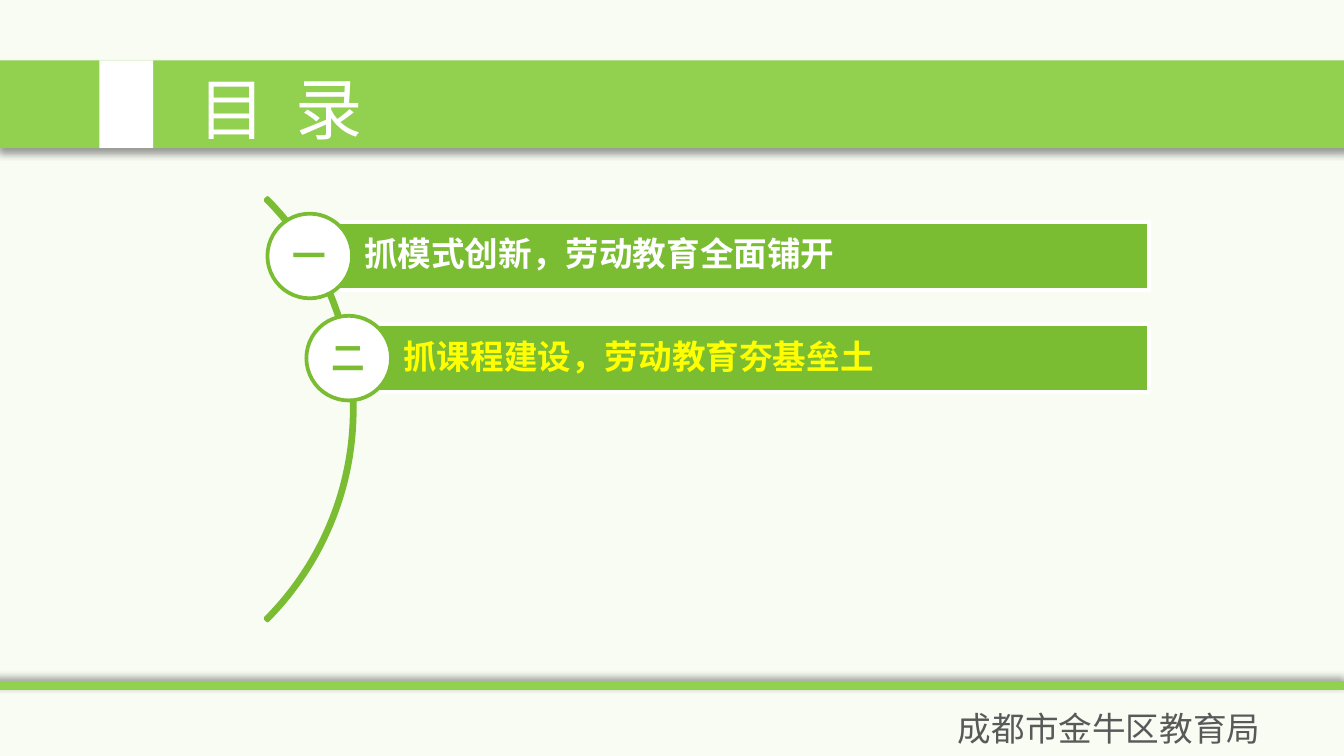
"""Build the contents slide with a title band, an arc and two numbered section bars."""
from lxml import etree
from pptx import Presentation
from pptx import util as u
from pptx.dml.color import RGBColor
from pptx.enum import shapes, text
from pptx.oxml.ns import qn

PX = 4572
GREEN = RGBColor(0x92, 0xD0, 0x50)
DARK_GREEN = RGBColor(0x7A, 0xBC, 0x32)
PALE = RGBColor(0xF8, 0xFC, 0xF3)
WHITE = RGBColor(0xFF, 0xFF, 0xFF)
YELLOW = RGBColor(0xFF, 0xFF, 0x00)
GREY = RGBColor(0x59, 0x59, 0x59)
SANS = "Noto Sans CJK SC"

deck = Presentation()
deck.slide_width, deck.slide_height = 2000 * PX, 1125 * PX
page = deck.slides.add_slide(deck.slide_layouts[6])
page.background.fill.solid()
page.background.fill.fore_color.rgb = PALE


def draw(kind, left, top, width, height, fill, line=None):
    shape = page.shapes.add_shape(kind, left * PX, top * PX, width * PX, height * PX)
    shape.shadow.inherit = False
    shape.fill.solid()
    shape.fill.fore_color.rgb = fill
    if line is None:
        shape.line.fill.background()
    else:
        shape.line.color.rgb = line
        shape.line.width = u.Pt(2)
    return shape


def write(words, left, top, width, height, color, size=18, font=SANS, bold=False, spacing=0, box=None):
    if box is None:
        box = page.shapes.add_textbox(left * PX, top * PX, width * PX, height * PX)
        box.text_frame.word_wrap = False
    para = box.text_frame.paragraphs[0]
    para.alignment = text.PP_ALIGN.LEFT
    span = para.add_run()
    span.text = words
    span.font.size = u.Pt(size)
    span.font.bold = bold
    span.font.color.rgb = color
    span.font.name = font
    props = span.font._element
    etree.SubElement(props, qn("a:ea")).set("typeface", font)
    if spacing:
        props.set("spc", str(spacing))
    return para


band = draw(shapes.MSO_SHAPE.RECTANGLE, -2, 90, 2010, 130, GREEN)
draw(shapes.MSO_SHAPE.RECTANGLE, 148, 90, 80, 130, WHITE)
rule = page.shapes.add_connector(shapes.MSO_CONNECTOR.STRAIGHT, -4 * PX, 1020 * PX, 2004 * PX, 1020 * PX)
rule.line.color.rgb = GREEN
rule.line.width = u.Pt(4.5)

for item, angle in ((band, 90), (rule, 225)):
    effects = item._element.spPr.get_or_add_effectLst()
    shadow = etree.SubElement(effects, qn("a:outerShdw"), blurRad=str(u.Pt(4)),
                              dist=str(u.Pt(3)), dir=str(angle * 60000), rotWithShape="0")
    tint = etree.SubElement(shadow, qn("a:srgbClr"), val="000000")
    etree.SubElement(tint, qn("a:alpha"), val="40000")

write("成都市金牛区教育局", 1406, 1044, 494, 80, GREY)
write("目 录", 276, 90, 304, 142, WHITE, size=36, font="Noto Sans CJK JP", spacing=400)

arc = draw(shapes.MSO_SHAPE.BLOCK_ARC, -360, 164, 888, 890, DARK_GREEN, DARK_GREEN)
for index, value in enumerate((189, 27, 0.005)):
    arc.adjustments[index] = value

sections = (
    ("一", "抓模式创新，劳动教育全面铺开", 462, WHITE),
    ("二", "抓课程建设，劳动教育夯基垒土", 520, YELLOW),
)
for index, (number, heading, left, color) in enumerate(sections):
    top = 330 + 152 * index
    bar = draw(shapes.MSO_SHAPE.RECTANGLE, left, top, 1710 - left, 102, DARK_GREEN, WHITE)
    bar.text_frame.margin_left = 80 * PX
    bar.text_frame.margin_right = 10 * PX
    bar.text_frame.vertical_anchor = text.MSO_ANCHOR.MIDDLE
    para = write(heading, left, top, 1710 - left, 102, color, bold=True, box=bar)
    para.line_spacing = 0.9
    draw(shapes.MSO_SHAPE.OVAL, left - 64, top - 12, 126, 126, WHITE, DARK_GREEN)
    write(number, left - 46, top + 10, 90, 80, DARK_GREEN, bold=True)

deck.save("out.pptx")
